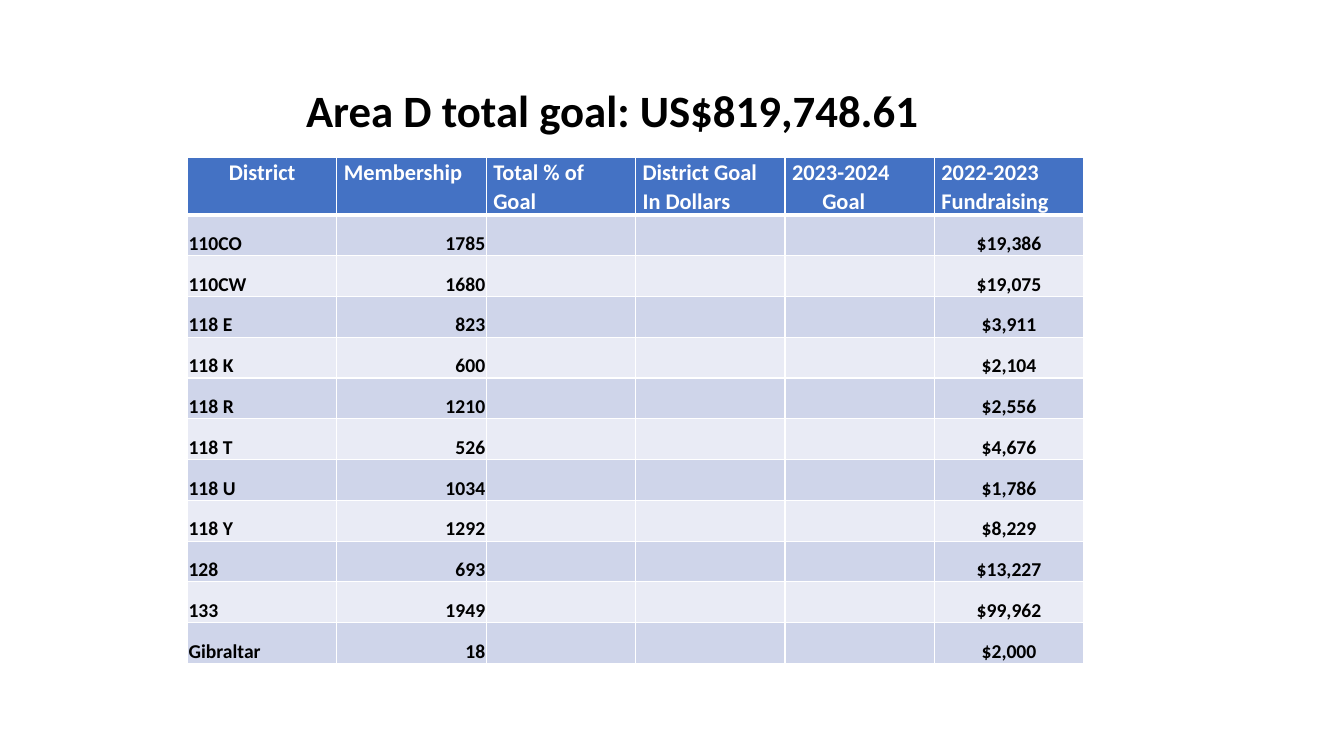
from dataclasses import dataclass

from lxml.etree import SubElement
from pptx import Presentation
from pptx.dml.color import RGBColor
from pptx.enum.text import MSO_ANCHOR, MSO_AUTO_SIZE, PP_ALIGN
from pptx.oxml.ns import qn
from pptx.util import Inches, Pt


@dataclass(frozen=True)
class Theme:
    """Colours, type sizes and spacing of the slide."""
    font: str = "Calibri"
    ink: str = "000000"
    white: str = "FFFFFF"
    header_fill: str = "4472C4"
    band_fills: tuple = ("CFD5EA", "E9EBF5")
    title_size: int = 32
    header_size: int = 16
    body_size: int = 14
    line_spacing: float = 1.07
    rule: int = 1
    header_rule: int = 3


HEADERS = ["District", "Membership", "Total % of Goal", "District Goal In Dollars",
           "2023-2024\nGoal", "2022-2023\nFundraising"]
DISTRICTS = [
    ("110CO", 1785, 19386),
    ("110CW", 1680, 19075),
    ("118 E", 823, 3911),
    ("118 K", 600, 2104),
    ("118 R", 1210, 2556),
    ("118 T", 526, 4676),
    ("118 U", 1034, 1786),
    ("118 Y", 1292, 8229),
    ("128", 693, 13227),
    ("133", 1949, 99962),
    ("Gibraltar", 18, 2000),
]


class SlideBuilder:
    """Draws styled elements on the current slide."""

    def __init__(self, page, theme):
        self.page = page
        self.theme = theme

    def format_text(self, frame, size, color, align, spacing=None):
        """Style every paragraph and run of a text frame."""
        for para in frame.paragraphs:
            para.alignment = align
            para.line_spacing = spacing
            for span in para.runs:
                span.font.name = self.theme.font
                span.font.size = Pt(size)
                span.font.bold = True
                span.font.color.rgb = RGBColor.from_string(color)

    def title(self, text, left, top, width, height):
        """Add the centred heading."""
        box = self.page.shapes.add_textbox(Inches(left), Inches(top), Inches(width), Inches(height))
        frame = box.text_frame
        frame.word_wrap = True
        frame.auto_size = MSO_AUTO_SIZE.SHAPE_TO_FIT_TEXT
        frame.text = text
        self.format_text(frame, self.theme.title_size, self.theme.ink, PP_ALIGN.CENTER,
                         self.theme.line_spacing)
        frame.paragraphs[0].space_after = Pt(8)

    def paint(self, cell, fill, top_rule, bottom_rule):
        """Give a cell its borders and fill."""
        rule = self.theme.rule
        properties = cell._tc.get_or_add_tcPr()
        for side, width in zip("LRTB", (rule, rule, top_rule, bottom_rule)):
            line = SubElement(properties, qn(f"a:ln{side}"), w=str(Pt(width)))
            solid = SubElement(line, qn("a:solidFill"))
            SubElement(solid, qn("a:srgbClr"), val=self.theme.white)
        cell.fill.solid()
        cell.fill.fore_color.rgb = RGBColor.from_string(fill)

    def set_margins(self, cell, side, top):
        """Set the side and top insets of a cell with none below."""
        cell.margin_left = cell.margin_right = Inches(side)
        cell.margin_top = Inches(top)
        cell.margin_bottom = 0

    def header_cell(self, cell, text, align):
        """Fill one heading cell."""
        theme = self.theme
        self.set_margins(cell, 0.07, 0)
        cell.text_frame.text = text
        self.format_text(cell.text_frame, theme.header_size, theme.white, align, theme.line_spacing)
        self.paint(cell, theme.header_fill, theme.rule, theme.header_rule)

    def body_cell(self, cell, text, align, row):
        """Fill one banded data cell."""
        theme = self.theme
        if text:
            self.set_margins(cell, 0.01, 0.01)
            cell.vertical_anchor = MSO_ANCHOR.BOTTOM
            cell.text_frame.text = text
            self.format_text(cell.text_frame, theme.body_size, theme.ink, align)
        top_rule = theme.header_rule if row == 1 else theme.rule
        self.paint(cell, theme.band_fills[(row - 1) % 2], top_rule, theme.rule)

    def table(self, headers, records, left, top, width, height):
        """Add the district table with equal columns and rows."""
        frame = self.page.shapes.add_table(len(records) + 1, len(headers), Inches(left),
                                           Inches(top), Inches(width), Inches(height))
        grid = frame.table
        for column, text in enumerate(headers):
            align = PP_ALIGN.LEFT if column else PP_ALIGN.CENTER
            self.header_cell(grid.cell(0, column), text, align)
        goal = grid.cell(0, 4).text_frame.paragraphs[1]
        goal._p.get_or_add_pPr().set("marL", str(Inches(0.3)))
        aligns = [PP_ALIGN.LEFT, PP_ALIGN.RIGHT] + [PP_ALIGN.CENTER] * 4
        for row, (district, members, raised) in enumerate(records, 1):
            texts = [district, str(members), "", "", "", f"${raised:,}"]
            for column, (text, align) in enumerate(zip(texts, aligns)):
                self.body_cell(grid.cell(row, column), text, align, row)


def main():
    """Build and save the deck."""
    deck = Presentation()
    deck.slide_width = Inches(13.33)
    deck.slide_height = Inches(7.5)
    page = deck.slides.add_slide(deck.slide_layouts[6])
    builder = SlideBuilder(page, Theme())
    builder.title("Area D total goal: US$819,748.61", 2.74, 0.73, 6.67, 0.65)
    builder.table(HEADERS, DISTRICTS, 1.86, 1.56, 8.89, 4.86)
    deck.save("out.pptx")


if __name__ == "__main__":
    main()
